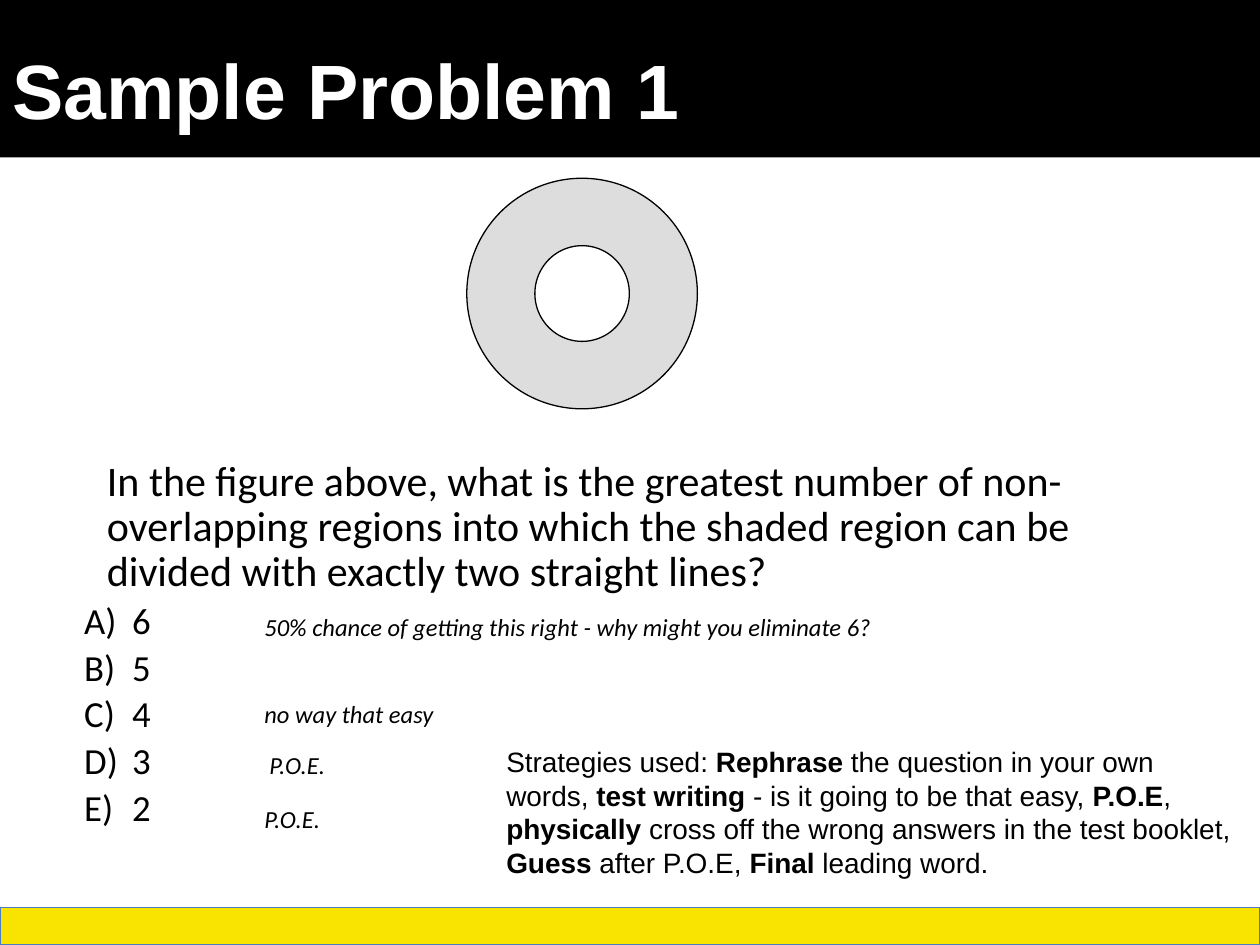
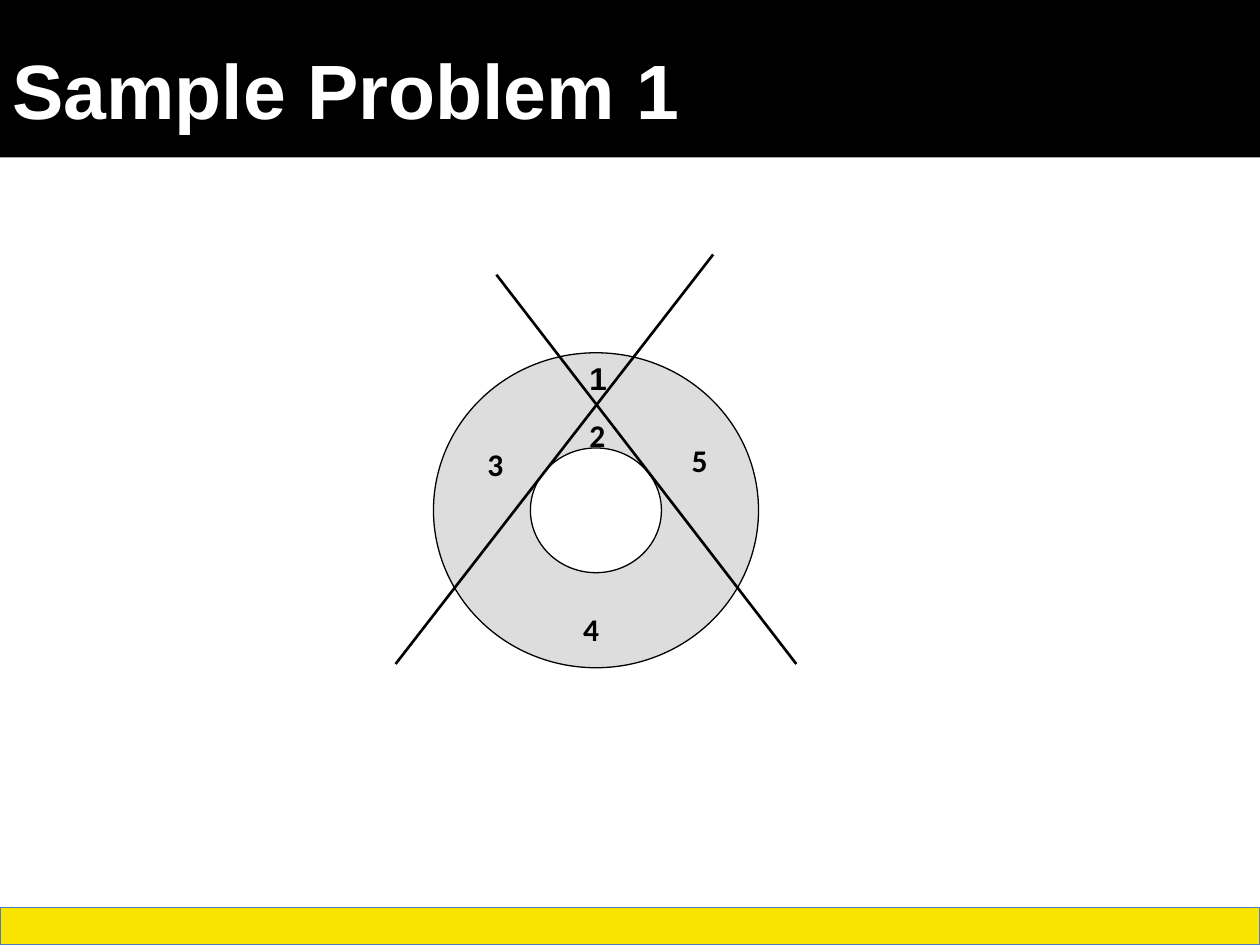
from lxml.etree import SubElement
from pptx import Presentation
from pptx.dml.color import RGBColor
from pptx.enum.shapes import MSO_CONNECTOR as Connector, MSO_SHAPE as Shape
from pptx.enum.text import MSO_ANCHOR as Anchor
from pptx.oxml.ns import qn
from pptx.util import Inches, Pt

COLORS = {
    "black": "000000",
    "white": "FFFFFF",
    "yellow": "F9E300",
    "band_edge": "4B7EBC",
    "shade": "DDDDDD",
}
WIDTH, HEIGHT = 10, 7.5

QUESTION = (
    "In the figure above, what is the greatest number of non-overlapping regions "
    "into which the shaded region can be divided with exactly two straight lines?"
)
ANSWERS = ["6", "5", "4", "3", "2"]
STRATEGIES = (
    "Strategies used: **Rephrase **the question in your own words, **test writing** - "
    "is it going to be that easy, **P.O.E**, **physically **cross off the wrong answers "
    "in the test booklet, **Guess** after P.O.E, **Final** leading word."
)
HINTS = [  # text, left, top, width
    ("50% chance of getting this right - why might you eliminate 6?", 2, 4.81, 5.5),
    ("no way that easy", 2, 5.5, 1.92),
    ("P.O.E.", 2.04, 5.9, 0.8),
    ("P.O.E.", 2, 6.33, 0.8),
]
CUTS = [((5.66, 2.02), (3.14, 5.27)), ((3.94, 2.18), (6.32, 5.27))]
REGIONS = [  # number, left, top, font
    ("1", 4.58, 2.8, "Arial"),
    ("2", 4.58, 3.25, "Calibri"),
    ("3", 3.77, 3.48, "Calibri"),
    ("4", 4.53, 4.79, "Calibri"),
    ("5", 5.39, 3.45, "Calibri"),
]


def color(name):
    return RGBColor.from_string(COLORS[name])


def add_filled(slide, preset, left, top, width, height, fill, edge=None):
    shape = slide.shapes.add_shape(
        preset, Inches(left), Inches(top), Inches(width), Inches(height))
    shape.shadow.inherit = False
    shape.fill.solid()
    shape.fill.fore_color.rgb = color(fill)
    if edge:
        shape.line.color.rgb = color(edge)
        shape.line.width = Pt(0.75)
    else:
        shape.line.fill.background()


def add_frame(slide, left, top, width, height):
    box = slide.shapes.add_textbox(
        Inches(left), Inches(top), Inches(width), Inches(height))
    box.text_frame.word_wrap = True
    return box.text_frame


def style(paragraph, size, name="Calibri", ink="black", bold=None, italic=None):
    font = paragraph.font
    font.name, font.size = name, Pt(size)
    font.bold, font.italic = bold, italic
    font.color.rgb = color(ink)


def add_label(slide, text, left, top, width, height, size, **font):
    frame = add_frame(slide, left, top, width, height)
    frame.text = text
    style(frame.paragraphs[0], size, **font)
    return frame


def indent(paragraph, margin, hanging=0):
    properties = paragraph._p.get_or_add_pPr()
    properties.set("marL", str(Inches(margin)))
    properties.set("indent", str(-Inches(hanging)))
    return properties


def add_question(slide):
    frame = add_frame(slide, 0.33, 3.6, 9.25, 3.17)
    question = frame.paragraphs[0]
    question.text = QUESTION
    question.line_spacing = 0.9
    indent(question, 0.42)
    style(question, 24)
    for text in ANSWERS:
        answer = frame.add_paragraph()
        answer.text = text
        answer.line_spacing = 0.9
        answer.space_before = Pt(4)
        properties = indent(answer, 0.62, 0.38)
        SubElement(properties, qn("a:buAutoNum"), type="alphaUcParenR")
        style(answer, 21)


def add_strategies(slide):
    """Text between double asterisks is bold."""
    paragraph = add_frame(slide, 3.92, 5.86, 5.95, 1.18).paragraphs[0]
    for number, part in enumerate(STRATEGIES.split("**")):
        run = paragraph.add_run()
        run.text = part
        run.font.bold = number % 2 == 1
    style(paragraph, 16, name="Arial")


def add_ring(slide, center, outer, inner):
    """Shaded ellipse with a white one inside; outer and inner are (width, height)."""
    for (width, height), fill in ((outer, "shade"), (inner, "white")):
        add_filled(slide, Shape.OVAL, center[0] - width / 2, center[1] - height / 2,
                   width, height, fill, "black")


def add_cut(slide, start, end):
    cut = slide.shapes.add_connector(
        Connector.STRAIGHT, *(Inches(value) for value in start + end))
    cut.line.color.rgb = color("black")
    cut.line.width = Pt(1.5)
    SubElement(cut._element.spPr, qn("a:effectLst"))


def add_problem_slide(deck, title):
    slide = deck.slides.add_slide(deck.slide_layouts[6])
    add_filled(slide, Shape.RECTANGLE, 0, 0, WIDTH, 1.25, "black")
    add_filled(slide, Shape.RECTANGLE, 0, 7.2, WIDTH, 0.3, "yellow", "band_edge")
    heading = add_label(slide, title, 0, 0.08, 9.5, 1.25, 44,
                        name="Arial", ink="white", bold=True)
    heading.vertical_anchor = Anchor.MIDDLE
    return slide


def main():
    deck = Presentation()
    deck.slide_width, deck.slide_height = Inches(WIDTH), Inches(HEIGHT)

    problem = add_problem_slide(deck, "Sample Problem 1")
    add_ring(problem, (4.62, 2.33), (1.83, 1.83), (0.75, 0.76))
    add_question(problem)
    add_strategies(problem)
    for text, left, top, width in HINTS:
        add_label(problem, text, left, top, width, 0.34, 14, italic=True)

    solution = add_problem_slide(deck, "Sample Problem 1")
    add_ring(solution, (4.73, 4.05), (2.58, 2.5), (1.04, 0.99))
    for start, end in CUTS:
        add_cut(solution, start, end)
    for number, left, top, name in REGIONS:
        add_label(solution, number, left, top, 0.42, 0.4, 18, name=name, bold=True)

    deck.save("out.pptx")


if __name__ == "__main__":
    main()
